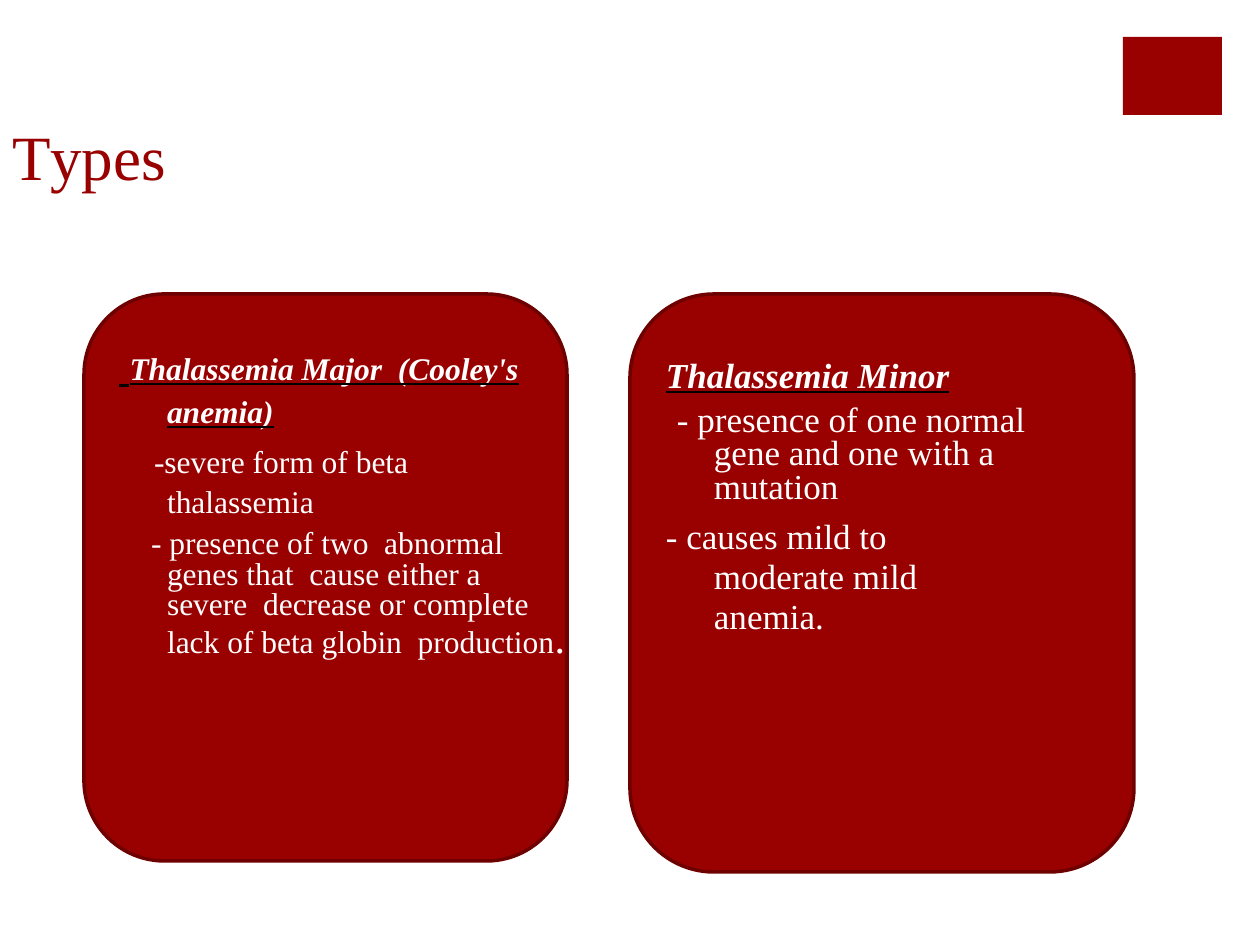
from lxml import etree
from pptx import Presentation, util as u
from pptx.dml.color import RGBColor
from pptx.enum import shapes, text
from pptx.oxml.ns import qn

PX = 914400 / 126
RED, EDGE, WHITE, BLACK = "990000", "6E0000", "FFFFFF", "000000"
FONT = "Times New Roman"


def px(n):
    return u.Emu(round(n * PX))


def paint(fmt, hue):
    """Colour a fill or a font."""
    if hasattr(fmt, "solid"):
        fmt.solid()
        fmt.fore_color.rgb = RGBColor.from_string(hue)
    else:
        fmt.color.rgb = RGBColor.from_string(hue)


def block(slide, kind, box, edge=None):
    shape = slide.shapes.add_shape(kind, *map(px, box))
    shape.shadow.inherit = False
    paint(shape.fill, RED)
    if edge:
        paint(shape.line.fill, edge)
        shape.line.width = u.Pt(2)
    else:
        shape.line.fill.background()
    return shape


def frame(slide, box, top):
    """Text box with only a top inset."""
    body = slide.shapes.add_textbox(*map(px, box)).text_frame
    body.word_wrap = True
    body.vertical_anchor = text.MSO_ANCHOR.TOP
    body.margin_left = body.margin_right = body.margin_bottom = 0
    body.margin_top = px(top)
    return body


def add_run(para, words, size, hue, head=False, track=0):
    run = para.add_run()
    run.text = words
    font = run.font
    font.name, font.size = FONT, u.Pt(size)
    font.bold = font.italic = font.underline = head
    paint(font, hue)
    props = font._element
    if track:
        props.set("spc", str(track))
    if head:
        # Black underline beneath white letters
        line = etree.Element(qn("a:uFill"))
        solid = etree.SubElement(line, qn("a:solidFill"))
        etree.SubElement(solid, qn("a:srgbClr")).set("val", BLACK)
        props.find(qn("a:latin")).addprevious(line)


def title(slide, box):
    para = frame(slide, box, 8).paragraphs[0]
    add_run(para, "T", 36, RED, track=-260)
    add_run(para, "ypes", 36, RED)


def card(slide, box, inner, top, paras):
    """Rounded card; inner is its text box relative to the card."""
    x, y = box[:2]
    block(slide, shapes.MSO_SHAPE.ROUNDED_RECTANGLE, box, EDGE)
    body = frame(slide, (x + inner[0], y + inner[1], *inner[2:]), top)
    for i, (left, first, lead, gap, runs) in enumerate(paras):
        para = body.add_paragraph() if i else body.paragraphs[0]
        props = para._p.get_or_add_pPr()
        props.set("marL", str(px(left)))
        props.set("indent", str(px(first)))
        para.line_spacing = lead
        para.space_before = u.Pt(gap)
        for words, *look in runs:
            if words == "\n":
                para.add_line_break()
            else:
                add_run(para, words, *look)


def main():
    deck = Presentation()
    deck.slide_width, deck.slide_height = px(1260), px(945)
    slide = deck.slides.add_slide(deck.slide_layouts[6])
    fixed = u.Pt(23)

    # Corner block and title
    block(slide, shapes.MSO_SHAPE.RECTANGLE, (1123, 37, 99, 78))
    title(slide, (12, 110, 461, 79))

    # Major type
    card(slide, (84, 294, 483, 567), (34, 42, 449, 460), 13, [
        (49, -48, fixed, 0, [
            (" ", 24, BLACK, True, -170),
            ("Thalassemia Major  (Cooley's anemia)", 18, WHITE, True)]),
        (49, -13, fixed, 5.8, [
            ("-severe form of beta", 18, WHITE), ("\n",),
            ("thalassemia", 18, WHITE)]),
        (49, -16, 0.8, 6, [
            ("- presence of two  abnormal genes that  cause either a severe  "
             "decrease or complete  lack of beta globin  production",
             18, WHITE, False, -1),
            (".", 24, WHITE)]),
    ])

    # Minor type
    card(slide, (630, 294, 504, 578), (35, 53, 431, 447), 6, [
        (1, 0, 1.0, 0, [("Thalassemia Minor", 20, WHITE, True)]),
        (49, -37, 0.8, 5.8, [
            ("- presence of one normal  gene and one with a  mutation",
             20, WHITE)]),
        (49, -48, fixed, 5.6, [
            ("- causes mild to", 20, WHITE), ("\n",),
            ("moderate mild", 20, WHITE), ("\n",),
            ("anemia.", 20, WHITE)]),
    ])
    deck.save("out.pptx")


if __name__ == "__main__":
    main()
